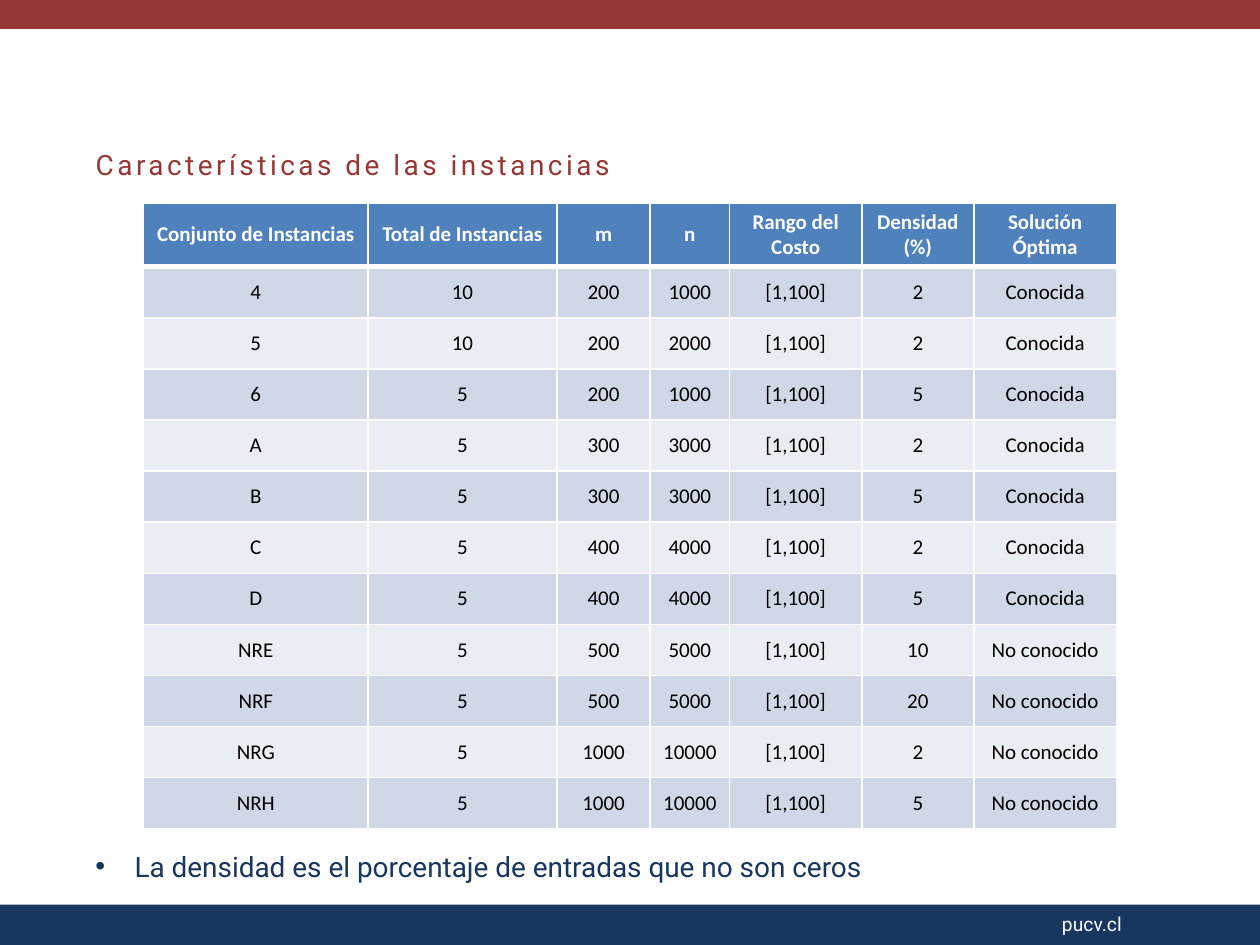
"""Build a slide with a table of the characteristics of the instance sets."""
import pptx
import pptx.dml.color
import pptx.enum.shapes
import pptx.enum.text
import pptx.oxml.ns
import pptx.util
from lxml import etree
from pptx.util import Inches

RED = pptx.dml.color.RGBColor(0x95, 0x37, 0x35)
NAVY = pptx.dml.color.RGBColor(0x17, 0x37, 0x5E)
WHITE = pptx.dml.color.RGBColor(0xFF, 0xFF, 0xFF)
BLACK = pptx.dml.color.RGBColor(0x00, 0x00, 0x00)
HEADER_BLUE = pptx.dml.color.RGBColor(0x4F, 0x81, 0xBD)
DARK_BAND = pptx.dml.color.RGBColor(0xD0, 0xD8, 0xE8)
LIGHT_BAND = pptx.dml.color.RGBColor(0xE9, 0xED, 0xF4)

HEADERS = ["Conjunto de Instancias", "Total de Instancias", "m", "n",
           "Rango del Costo", "Densidad (%)", "Solución Óptima"]
COST_RANGE = "[1,100]"
INSTANCE_SETS = [
    ("4", 10, 200, 1000, COST_RANGE, 2, "Conocida"),
    ("5", 10, 200, 2000, COST_RANGE, 2, "Conocida"),
    ("6", 5, 200, 1000, COST_RANGE, 5, "Conocida"),
    ("A", 5, 300, 3000, COST_RANGE, 2, "Conocida"),
    ("B", 5, 300, 3000, COST_RANGE, 5, "Conocida"),
    ("C", 5, 400, 4000, COST_RANGE, 2, "Conocida"),
    ("D", 5, 400, 4000, COST_RANGE, 5, "Conocida"),
    ("NRE", 5, 500, 5000, COST_RANGE, 10, "No conocido"),
    ("NRF", 5, 500, 5000, COST_RANGE, 20, "No conocido"),
    ("NRG", 5, 1000, 10000, COST_RANGE, 2, "No conocido"),
    ("NRH", 5, 1000, 10000, COST_RANGE, 5, "No conocido"),
]
COLUMN_WIDTHS = [1.78, 1.5, 0.74, 0.63, 1.05, 0.89, 1.13]


def write_text(shape, text, size, color):
    frame = shape.text_frame
    frame.word_wrap = True
    frame.auto_size = pptx.enum.text.MSO_AUTO_SIZE.NONE
    frame.vertical_anchor = pptx.enum.text.MSO_ANCHOR.TOP
    paragraph = frame.paragraphs[0]
    paragraph.text = text
    paragraph.alignment = pptx.enum.text.PP_ALIGN.LEFT
    paragraph.font.name = "Roboto"
    paragraph.font.size = pptx.util.Pt(size)
    paragraph.font.color.rgb = color
    return paragraph


def add_border(cell, side, width):
    properties = cell._tc.get_or_add_tcPr()
    line = etree.SubElement(properties, pptx.oxml.ns.qn(f"a:{side}"), w=str(pptx.util.Pt(width)))
    fill = etree.SubElement(line, pptx.oxml.ns.qn("a:solidFill"))
    etree.SubElement(fill, pptx.oxml.ns.qn("a:srgbClr"), val=str(WHITE))


presentation = pptx.Presentation()
presentation.slide_width = Inches(10)
presentation.slide_height = Inches(7.5)
slide = presentation.slides.add_slide(presentation.slide_layouts[5])

for top, height, color in [(7.18, 0.32, NAVY), (0, 0.23, RED)]:
    band = slide.shapes.add_shape(pptx.enum.shapes.MSO_SHAPE.RECTANGLE,
                                  0, Inches(top), Inches(10), Inches(height))
    band.shadow.inherit = False
    band.fill.solid()
    band.fill.fore_color.rgb = color
    band.line.fill.background()

site = slide.shapes.add_textbox(Inches(8.33), Inches(7.19), Inches(2.41), Inches(0.72))
write_text(site, "pucv.cl", 11, WHITE)

title = slide.shapes.title
title.left, title.top = Inches(0.66), Inches(1.12)
title.width, title.height = Inches(5.11), Inches(0.37)
title_paragraph = write_text(title, "Características de las instancias", 16, RED)
title_paragraph.runs[0].font._element.set("spc", "200")

rows = [HEADERS] + INSTANCE_SETS
table = slide.shapes.add_table(len(rows), len(HEADERS), Inches(1.14), Inches(1.61),
                               Inches(7.72), Inches(4.87)).table
for column, width in zip(table.columns, COLUMN_WIDTHS):
    column.width = Inches(width)
for row_index, row in enumerate(rows):
    is_header = row_index == 0
    band_color = DARK_BAND if row_index % 2 else LIGHT_BAND
    for column_index, value in enumerate(row):
        cell = table.cell(row_index, column_index)
        add_border(cell, "lnL", 1)
        add_border(cell, "lnR", 1)
        add_border(cell, "lnT", 3 if row_index == 1 else 1)
        add_border(cell, "lnB", 3 if is_header else 1)
        cell.fill.solid()
        cell.fill.fore_color.rgb = HEADER_BLUE if is_header else band_color
        cell.vertical_anchor = pptx.enum.text.MSO_ANCHOR.MIDDLE
        paragraph = cell.text_frame.paragraphs[0]
        paragraph.text = str(value)
        paragraph.alignment = pptx.enum.text.PP_ALIGN.CENTER
        paragraph.font.name = "Calibri"
        paragraph.font.size = pptx.util.Pt(12)
        paragraph.font.bold = is_header
        paragraph.font.color.rgb = WHITE if is_header else BLACK

note = slide.shapes.add_textbox(Inches(0.66), Inches(6.69), Inches(8.83), Inches(0.37))
note_properties = note.text_frame.paragraphs[0]._p.get_or_add_pPr()
note_properties.set("marL", str(Inches(0.31)))
note_properties.set("indent", str(Inches(-0.31)))
etree.SubElement(note_properties, pptx.oxml.ns.qn("a:buFont"), typeface="Arial")
etree.SubElement(note_properties, pptx.oxml.ns.qn("a:buChar"), char="•")
write_text(note, "La densidad es el porcentaje de entradas que no son ceros", 16, NAVY)

presentation.save("out.pptx")
